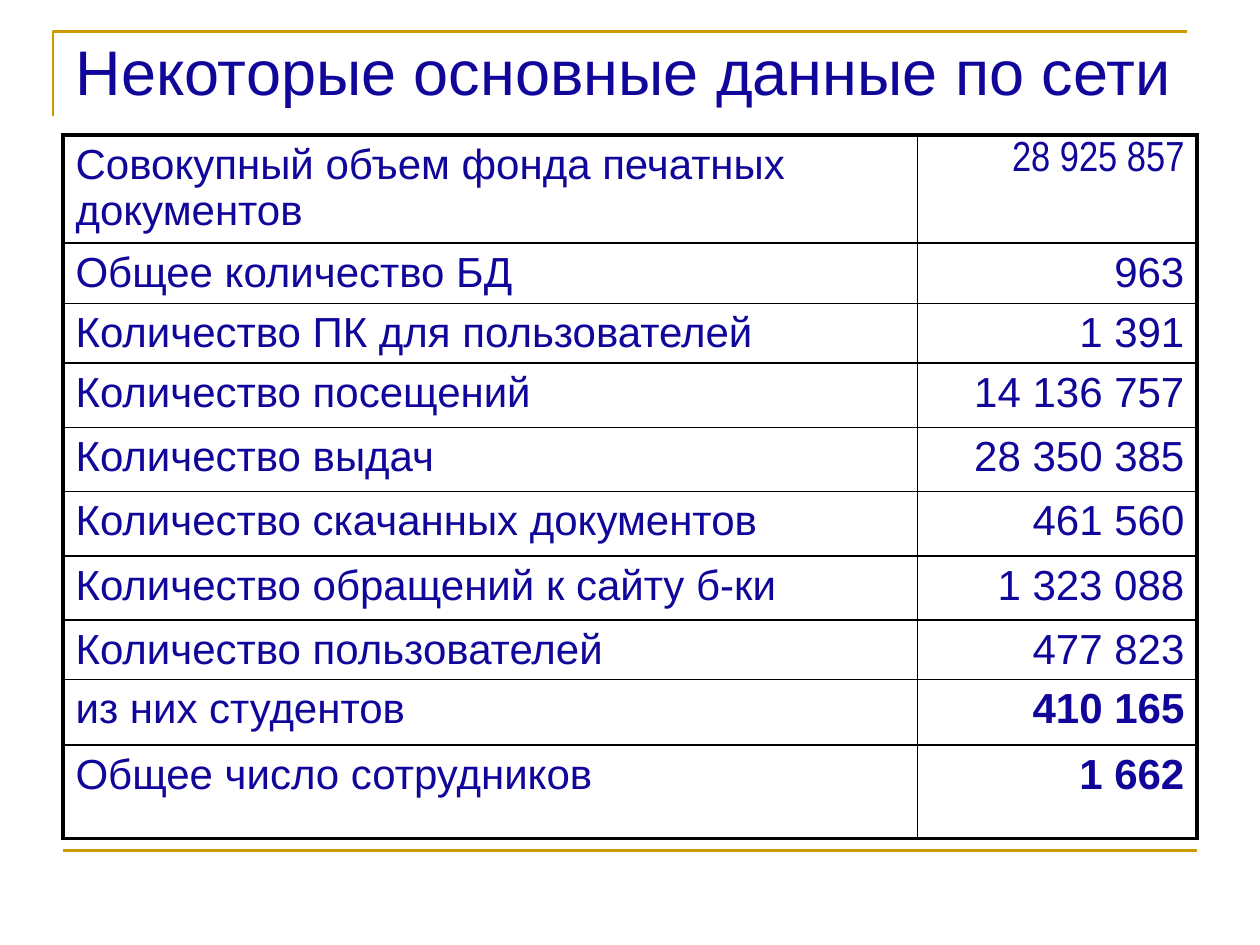
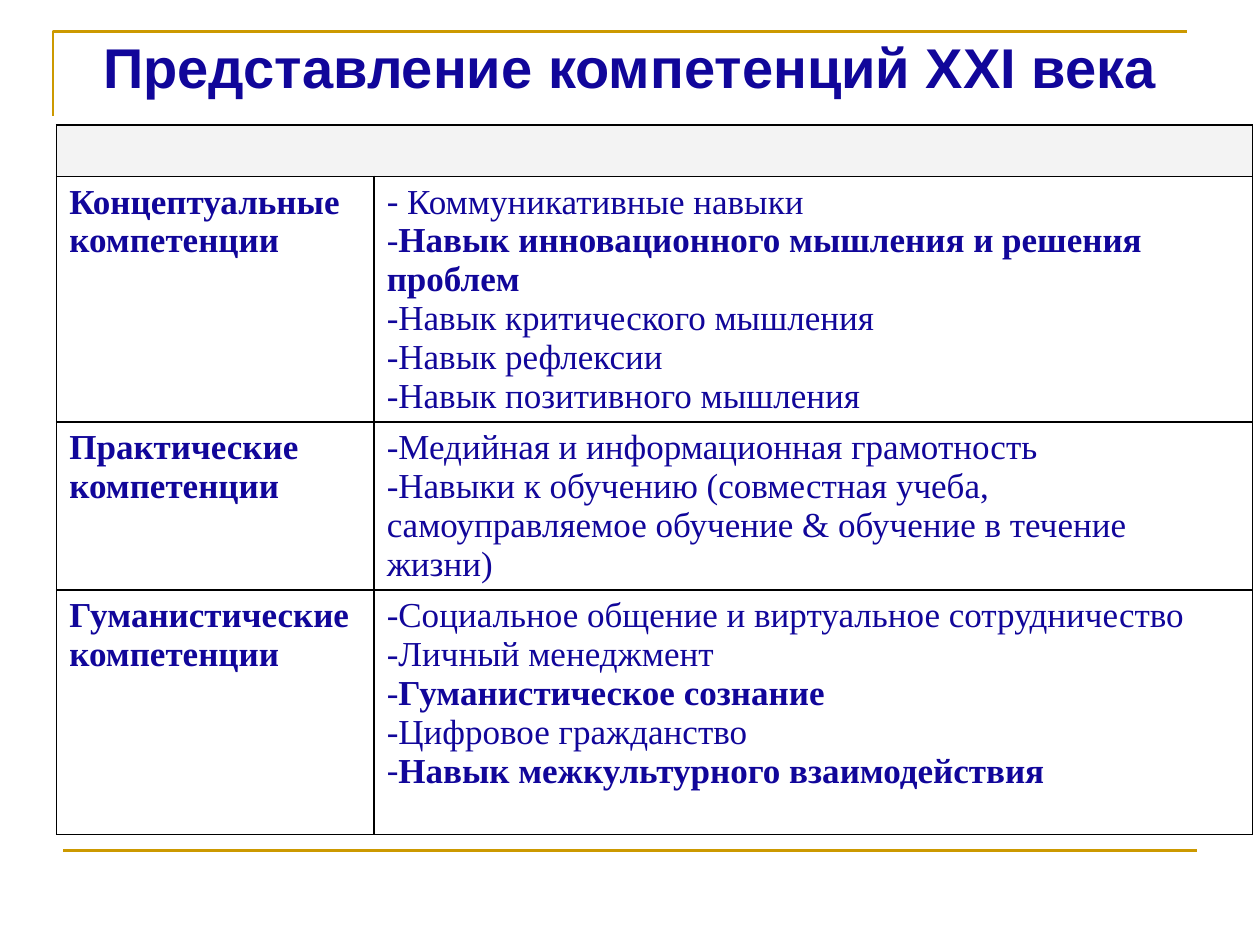
from lxml.etree import SubElement
from pptx import Presentation
from pptx.dml.color import RGBColor
from pptx.enum.shapes import MSO_CONNECTOR as Connector
from pptx.enum.text import MSO_ANCHOR as Anchor, MSO_AUTO_SIZE as AutoSize, PP_ALIGN as Align
from pptx.oxml import parse_xml
from pptx.oxml.ns import nsdecls, qn
from pptx.util import Inches, Pt

NAVY, GOLD, BLACK, GREY = "11069A", "CC9900", "000000", "F3F3F3"
SANS, NARROW, SERIF = "Arial", "Arial Narrow", "Times New Roman"
THIN, THICK = 1, 2.25

# Label, value, value is bold
NETWORK_DATA = [
    ("Совокупный объем фонда печатных документов", "28 925 857", False),
    ("Общее количество БД", "963", False),
    ("Количество ПК для пользователей", "1 391", False),
    ("Количество посещений", "14 136 757", False),
    ("Количество выдач", "28 350 385", False),
    ("Количество скачанных документов", "461 560", False),
    ("Количество обращений к сайту б-ки", "1 323 088", False),
    ("Количество пользователей", "477 823", False),
    ("из них студентов", "410 165", True),
    ("Общее число сотрудников", "1 662", True),
]
NETWORK_ROWS = [0.86, 0.48, 0.47, 0.51, 0.51, 0.51, 0.51, 0.47, 0.52, 0.74]

# Group, its skills as (text, bold)
COMPETENCIES = [
    ("Концептуальные компетенции", [
        (" Коммуникативные навыки", False),
        ("Навык инновационного мышления и решения проблем", True),
        ("Навык критического мышления", False),
        ("Навык рефлексии", False),
        ("Навык позитивного мышления", False)]),
    ("Практические компетенции", [
        ("Медийная и информационная грамотность", False),
        ("Навыки к обучению (совместная учеба, самоуправляемое обучение"
         " & обучение в течение жизни)", False)]),
    ("Гуманистические компетенции", [
        ("Социальное общение и виртуальное сотрудничество", False),
        ("Личный менеджмент", False),
        ("Гуманистическое сознание", True),
        ("Цифровое гражданство", False),
        ("Навык межкультурного взаимодействия", True)]),
]
COMPETENCY_ROWS = [0.41, 1.95, 1.33, 1.94]


def color(value):
    return RGBColor.from_string(value)


def add_span(para, text, size, font=SANS, bold=False):
    span = para.add_run()
    span.text = text
    span.font.name = font
    span.font.size = Pt(size)
    span.font.bold = bold
    span.font.color.rgb = color(NAVY)


def style_line(shape):
    shape.line.color.rgb = color(GOLD)
    shape.line.width = Pt(1.5)


def add_frame(page):
    """Gold corner above the title and gold rule at the bottom."""
    outline = page.shapes.build_freeform(Inches(0.42), Inches(0.92))
    outline.add_line_segments(
        [(Inches(0.42), Inches(0.25)), (Inches(9.42), Inches(0.25))], close=False)
    corner = outline.convert_to_shape()
    corner.fill.background()
    corner.shadow.inherit = False
    style_line(corner)
    rule = page.shapes.add_connector(
        Connector.STRAIGHT, Inches(0.5), Inches(6.75), Inches(9.5), Inches(6.75))
    style_line(rule)
    SubElement(rule._element.spPr, qn("a:effectLst"))


def add_page(deck, title, height, size, align, bold=False):
    page = deck.slides.add_slide(deck.slide_layouts[5])
    add_frame(page)
    box = page.shapes.title
    box.left, box.top = Inches(0.5), Inches(0.21)
    box.width, box.height = Inches(9), Inches(height)
    frame = box.text_frame
    frame.word_wrap = True
    frame.auto_size = AutoSize.NONE
    frame.vertical_anchor = Anchor.TOP
    para = frame.paragraphs[0]
    para.alignment = align
    add_span(para, title, size, bold=bold)
    return page


def set_borders(cell, widths):
    """Draw the left, right, top and bottom borders, in that order."""
    properties = cell._tc.get_or_add_tcPr()
    for place, (side, width) in enumerate(zip("LRTB", widths)):
        properties.insert(place, parse_xml(
            f'<a:ln{side} {nsdecls("a")} w="{Pt(width)}"><a:solidFill>'
            f'<a:srgbClr val="{BLACK}"/></a:solidFill></a:ln{side}>'))


def add_grid(page, left, top, columns, rows, outer=THIN):
    """Add an unfilled table whose outer border may be heavier."""
    table = page.shapes.add_table(
        len(rows), len(columns), Inches(left), Inches(top),
        Inches(sum(columns)), Inches(sum(rows))).table
    table.first_row = table.horz_banding = False
    for column, width in zip(table.columns, columns):
        column.width = Inches(width)
    last_row, last_column = len(rows) - 1, len(columns) - 1
    for r, height in enumerate(rows):
        table.rows[r].height = Inches(height)
        for c in range(len(columns)):
            cell = table.cell(r, c)
            cell.fill.background()
            edges = (c == 0, c == last_column, r == 0, r == last_row)
            set_borders(cell, [outer if edge else THIN for edge in edges])
    return table


def add_dash(para, font):
    properties = para._p.get_or_add_pPr()
    properties.set("marL", "0")
    properties.set("indent", "0")
    SubElement(properties, qn("a:buFont")).set("typeface", font)
    SubElement(properties, qn("a:buChar")).set("char", "-")


def add_network_page(deck):
    page = add_page(deck, "Некоторые основные данные по сети", 0.63, 36, Align.LEFT)
    table = add_grid(page, 0.5, 1.07, [6.78, 2.22], NETWORK_ROWS, THICK)
    for r, (label, value, bold) in enumerate(NETWORK_DATA):
        add_span(table.cell(r, 0).text_frame.paragraphs[0], label, 24)
        para = table.cell(r, 1).text_frame.paragraphs[0]
        para.alignment = Align.RIGHT
        add_span(para, value, 24, NARROW if r == 0 else SANS, bold)


def add_competency_page(deck):
    page = add_page(deck, "Представление компетенций XXI века", 1.25, 32,
                    Align.CENTER, bold=True)
    table = add_grid(page, 0.45, 0.99, [2.52, 6.97], COMPETENCY_ROWS)
    # Empty grey header across both columns
    header = table.cell(0, 0)
    header.merge(table.cell(0, 1))
    header.fill.solid()
    header.fill.fore_color.rgb = color(GREY)
    for r, (group, skills) in enumerate(COMPETENCIES, start=1):
        add_span(table.cell(r, 0).text_frame.paragraphs[0], group, 20, SERIF, True)
        frame = table.cell(r, 1).text_frame
        for i, (skill, bold) in enumerate(skills):
            para = frame.add_paragraph() if i else frame.paragraphs[0]
            add_dash(para, SERIF)
            add_span(para, skill, 20, SERIF, bold)


def main():
    deck = Presentation()
    deck.slide_width, deck.slide_height = Inches(10), Inches(7.5)
    add_network_page(deck)
    add_competency_page(deck)
    deck.save("out.pptx")


if __name__ == "__main__":
    main()
